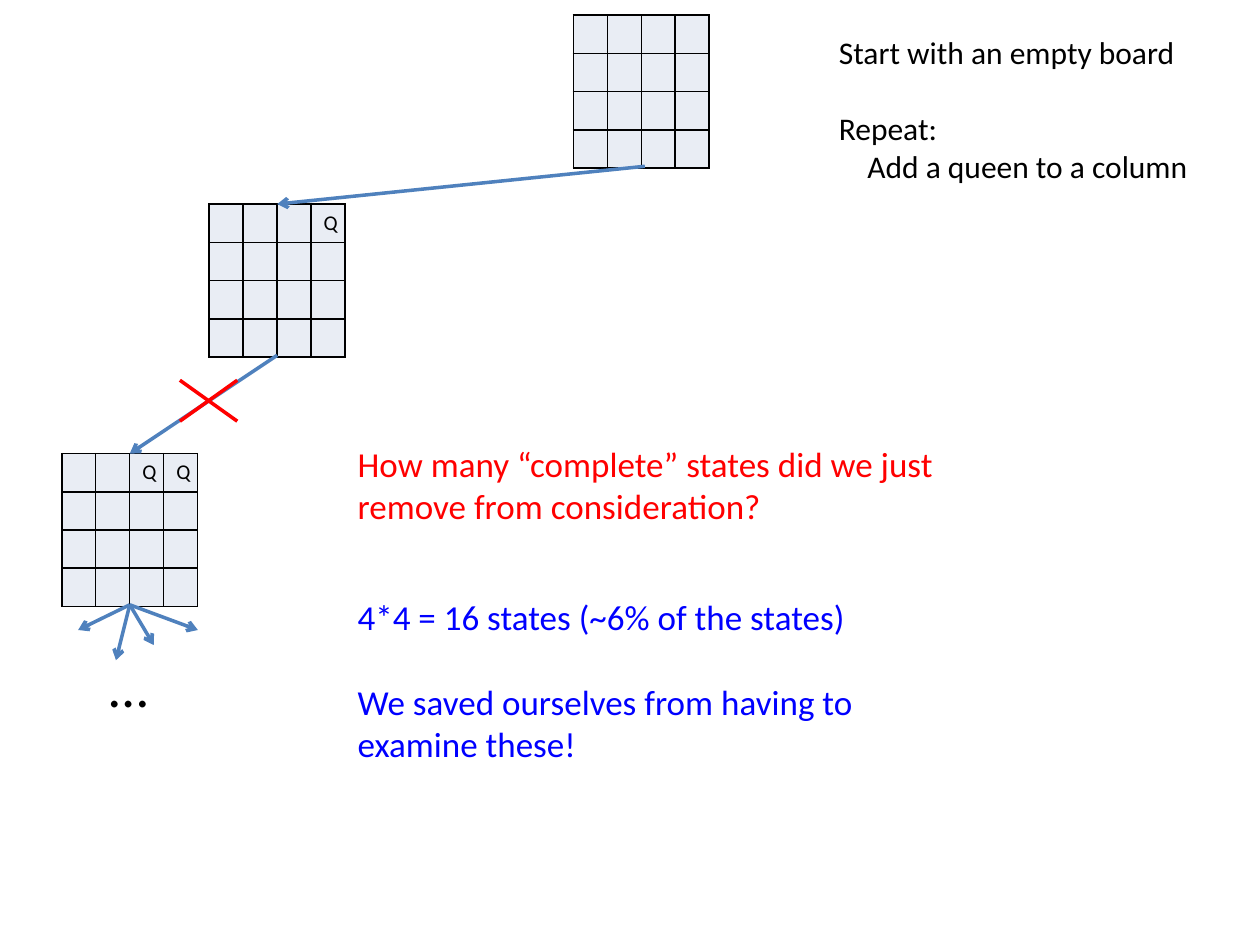
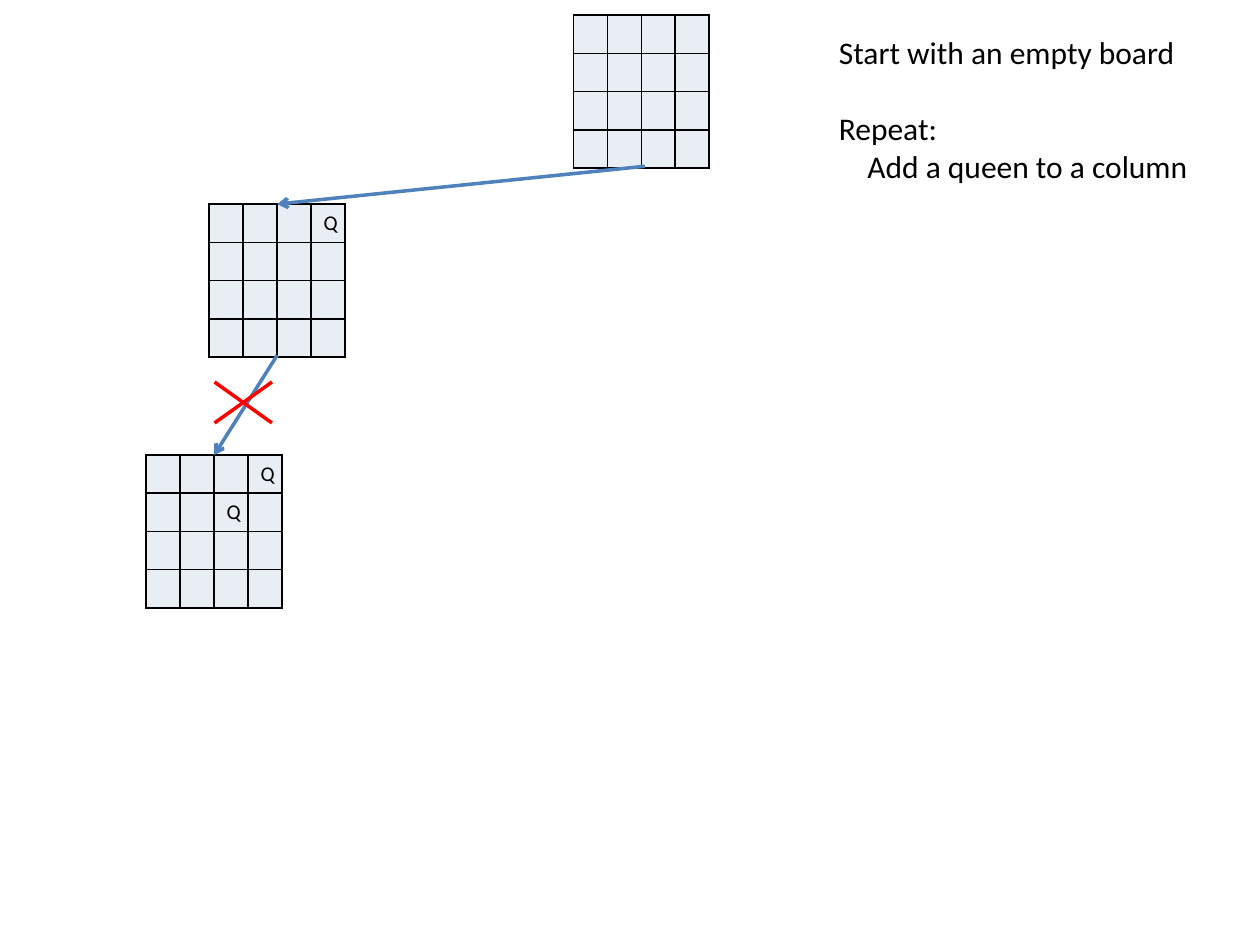
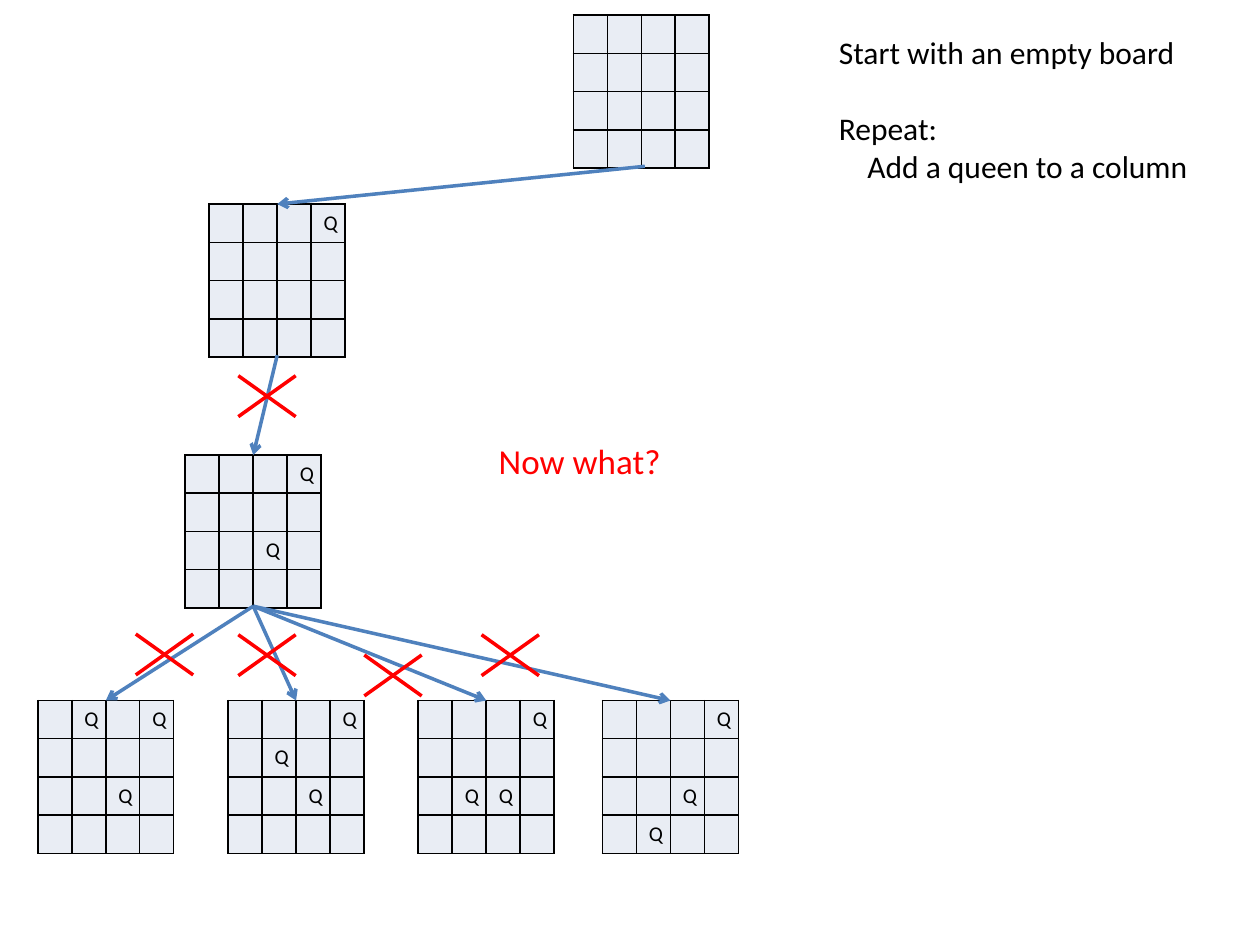
from lxml import etree
from pptx import Presentation
from pptx.dml.color import RGBColor
from pptx.enum.shapes import MSO_CONNECTOR
from pptx.enum.text import MSO_AUTO_SIZE
from pptx.oxml.ns import qn
from pptx.util import Pt

LINE = MSO_CONNECTOR.STRAIGHT
GROW = MSO_AUTO_SIZE.SHAPE_TO_FIT_TEXT

COLORS = {"ink": "000000", "cell": "E9EDF4", "arrow": "4F81BD",
          "red": "FF0000", "blue": "0000FF"}
FONT = "Calibri"
SIDE = 4                      # squares per board side
COL, ROW = 19.44, 21.85       # size of one square
WIDE, HIGH = SIDE * COL, 86.4  # board size used to join arrows

ROOT = (327.6, 8.64)
FIRST = (119.52, 116.64)
QUEEN = (0, 3)                # the queen placed first, as row and column


def rgb(name):
    return RGBColor.from_string(COLORS[name])


def put(item, values):
    for name, value in values.items():
        setattr(item, name, value)


def style(font, size, color):
    put(font, {"name": FONT, "size": Pt(size)})
    font.color.rgb = rgb(color)


# Lines
def line(slide, start, end, color, head=False):
    link = slide.shapes.add_connector(LINE, *map(Pt, (*start, *end)))
    link.line.width = Pt(2)
    link.line.color.rgb = rgb(color)
    if head:
        etree.SubElement(link.line._ln, qn("a:tailEnd"), type="arrow")
    etree.SubElement(link._element.spPr, qn("a:effectLst"))


def arrow(slide, start, end):
    line(slide, start, end, "arrow", head=True)


def cross(slide, x, y):
    dx, dy = 16.4, 11.7
    for rise in (dy, -dy):
        line(slide, (x - dx, y - rise), (x + dx, y + rise), "red")


# Boards
def top(spot):
    return spot[0] + WIDE / 2, spot[1]


def foot(spot):
    return spot[0] + WIDE / 2, spot[1] + HIGH


def edge(cell):
    props = cell._tc.get_or_add_tcPr()
    for index, tag in enumerate(("a:lnL", "a:lnR", "a:lnT", "a:lnB")):
        side = etree.Element(qn(tag), w=str(Pt(1)))
        fill = etree.SubElement(side, qn("a:solidFill"))
        etree.SubElement(fill, qn("a:srgbClr"), val=COLORS["ink"])
        props.insert(index, side)


def board(slide, spot, queens=()):
    box = (*spot, WIDE, SIDE * ROW)
    table = slide.shapes.add_table(SIDE, SIDE, *map(Pt, box)).table
    put(table, {"first_row": False, "horz_banding": False})
    for col in table.columns:
        col.width = Pt(COL)
    for y, row in enumerate(table.rows):
        row.height = Pt(ROW)
        for x, cell in enumerate(row.cells):
            cell.fill.solid()
            cell.fill.fore_color.rgb = rgb("cell")
            edge(cell)
            para = cell.text_frame.paragraphs[0]
            if (y, x) in queens:
                run = para.add_run()
                run.text = "Q"
                style(run.font, 12, "ink")
            else:
                etree.SubElement(para._p, qn("a:endParaRPr"), sz="1200")


# Text: each line is (words, space before, left indent)
def note(slide, box, lines, size, color, wrap=True):
    frame = slide.shapes.add_textbox(*map(Pt, box)).text_frame
    put(frame, {"word_wrap": wrap, "auto_size": GROW})
    for index, (words, gap, indent) in enumerate(lines):
        para = frame.add_paragraph() if index else frame.paragraphs[0]
        run = para.add_run()
        run.text = words
        style(run.font, size, color)
        para.space_before = Pt(gap)
        if indent:
            para._p.get_or_add_pPr().set("marL", str(Pt(indent)))


# What all slides share: the steps, the empty board, the first queen
def base(deck):
    slide = deck.slides.add_slide(deck.slide_layouts[6])
    board(slide, ROOT)
    board(slide, FIRST, [QUEEN])
    x, y = foot(ROOT)
    arrow(slide, (x + 2, y), top(FIRST))
    steps = [("Start with an empty board", 0, 0), ("Repeat:", 22, 0),
             ("Add a queen to a column", 0, 16.3)]
    note(slide, (472.3, 15.1, 216, 94.3), steps, 18, "ink", wrap=False)
    return slide


def child(slide, parent, spot, queens, mark):
    board(slide, spot, [QUEEN, *queens])
    arrow(slide, foot(parent), top(spot))
    cross(slide, *mark)


def same_row(deck):
    slide = base(deck)
    spot = (35.28, 259.2)
    child(slide, FIRST, spot, [(0, 2)], (119.2, 229))
    # Fan of unexplored states
    x, y = foot(spot)
    for dx, dy in ((-29.5, 14.4), (-7.9, 31.7), (13.7, 23), (38.9, 14.4)):
        arrow(slide, (x, y), (x + dx, y + dy))
    note(slide, (55.4, 368.6, 36.7, 46), [("…", 0, 0)], 32, "ink", wrap=False)
    # Question and answer
    ask = "How many “complete” states did we just remove from consideration?"
    note(slide, (197.3, 249.1, 344.9, 55.4), [(ask, 0, 0)], 20, "red")
    reply = [("4*4 = 16 states (~6% of the states)", 0, 0),
             ("We saved ourselves from having to examine these!", 24.4, 0)]
    note(slide, (197.3, 337, 344.9, 104.4), reply, 20, "blue")


def diagonal(deck):
    child(base(deck), FIRST, (83.52, 260), [(1, 2)], (139, 230))


def dead_end(deck):
    slide = base(deck)
    spot, second = (105.84, 260), (2, 2)
    child(slide, FIRST, spot, [second], (152.6, 226.4))
    # Third queen tried in each row of its column
    lefts = (21.6, 130.3, 239, 344.2)
    marks = ((94, 374), (152.6, 374.4), (224.6, 386), (291.6, 374.4))
    for row, (left, mark) in enumerate(zip(lefts, marks)):
        child(slide, spot, (left, 400.3), [second, (row, 1)], mark)
    note(slide, (277.9, 247.7, 144, 31.7), [("Now what?", 0, 0)], 20, "red")


def main():
    deck = Presentation()
    put(deck, {"slide_width": Pt(720), "slide_height": Pt(540)})
    for build in (same_row, diagonal, dead_end):
        build(deck)
    deck.save("out.pptx")


if __name__ == "__main__":
    main()
